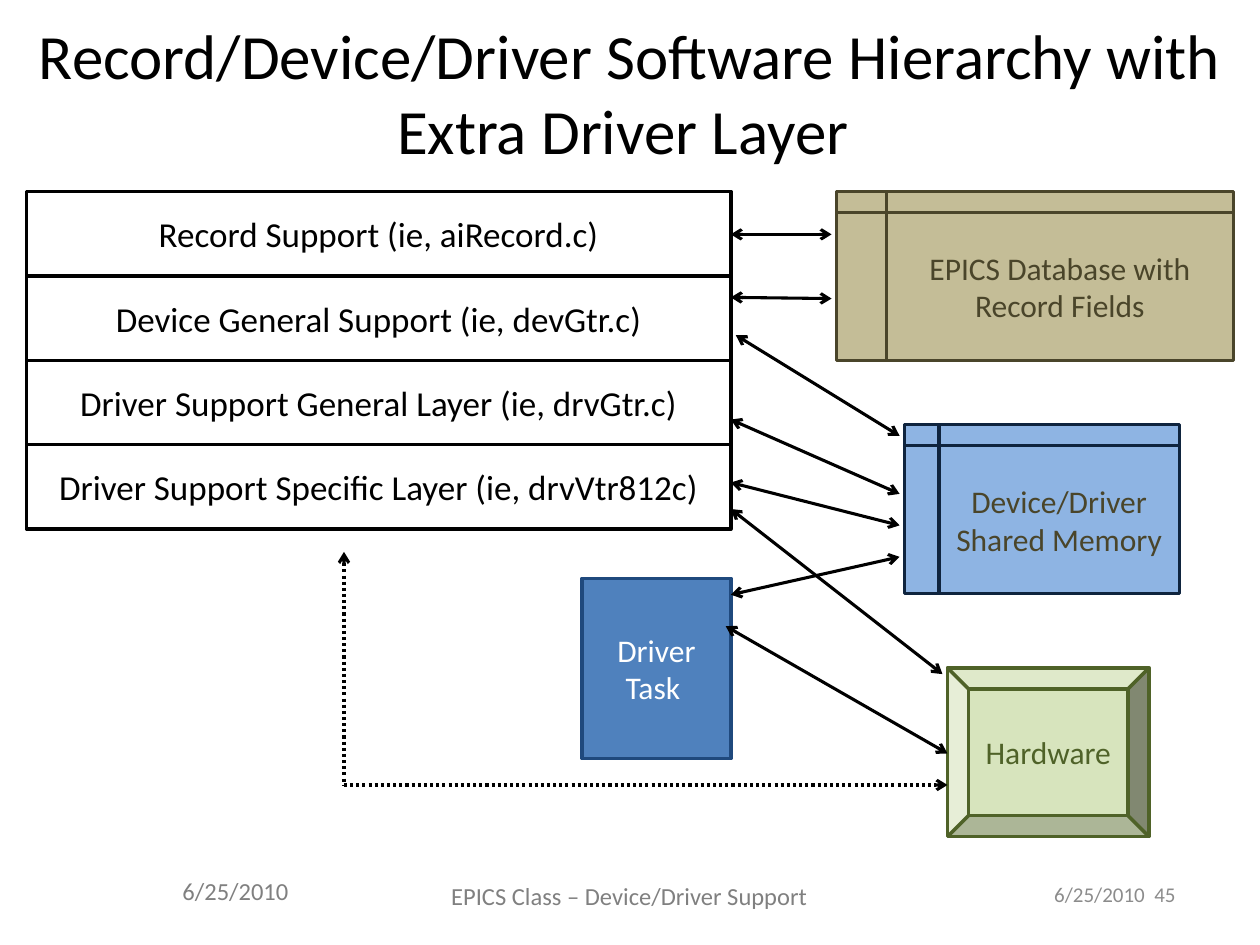
from typing import NamedTuple, Optional

from pptx import Presentation
from pptx.dml.color import RGBColor
from pptx.enum.dml import MSO_LINE
from pptx.enum.shapes import MSO_CONNECTOR, MSO_SHAPE
from pptx.enum.text import MSO_ANCHOR, MSO_AUTO_SIZE, PP_ALIGN
from pptx.oxml.ns import qn
from pptx.util import Inches, Pt
from lxml.etree import SubElement

FONT = "Calibri"
BLACK = RGBColor(0x00, 0x00, 0x00)
WHITE = RGBColor(0xFF, 0xFF, 0xFF)
FOOTER_GRAY = RGBColor(0x80, 0x80, 0x80)
NUMBER_GRAY = RGBColor(0x8C, 0x8C, 0x8C)
TAN = RGBColor(0xC4, 0xBD, 0x97)
DARK_TAN = RGBColor(0x4A, 0x45, 0x2A)
LIGHT_BLUE = RGBColor(0x8E, 0xB4, 0xE3)
NAVY = RGBColor(0x0F, 0x24, 0x3E)
BLUE = RGBColor(0x4F, 0x81, 0xBD)
DARK_BLUE = RGBColor(0x1F, 0x49, 0x7D)
LIGHT_GREEN = RGBColor(0xD7, 0xE4, 0xBD)
DARK_GREEN = RGBColor(0x4F, 0x62, 0x28)


class Box(NamedTuple):
    text: str
    kind: MSO_SHAPE
    left: float
    top: float
    width: float
    height: float
    fill: Optional[RGBColor]
    line: Optional[RGBColor]
    color: RGBColor
    size: int = 18
    align: PP_ALIGN = PP_ALIGN.CENTER
    anchor: MSO_ANCHOR = MSO_ANCHOR.MIDDLE


class Arrow(NamedTuple):
    start: tuple[float, float]
    end: tuple[float, float]
    head: bool = True
    tail: bool = True
    dotted: bool = False


class Footer(NamedTuple):
    text: str
    left: float
    width: float
    height: float
    size: int
    color: RGBColor
    align: PP_ALIGN


STACK_LEFT, STACK_TOP, STACK_WIDTH = 0.21, 1.52, 5.59
LAYER_HEIGHT = 0.67
STACK_RIGHT = STACK_LEFT + STACK_WIDTH
FOOTER_TOP = 6.9

LAYERS = [
    "Record Support (ie, aiRecord.c)",
    "Device General Support (ie, devGtr.c)",
    "Driver Support General Layer (ie, drvGtr.c)",
    "Driver Support Specific Layer (ie, drvVtr812c)",
]

BOXES = [
    Box("6/25/2010", MSO_SHAPE.RECTANGLE, 1.35, FOOTER_TOP, 1.6, 0.4, WHITE, None,
        FOOTER_GRAY, 14, PP_ALIGN.LEFT, MSO_ANCHOR.TOP),
    Box("EPICS Database with Record Fields", MSO_SHAPE.FLOWCHART_INTERNAL_STORAGE,
        6.64, 1.52, 3.15, 1.34, TAN, DARK_TAN, DARK_TAN),
    Box("Device/Driver Shared Memory", MSO_SHAPE.FLOWCHART_INTERNAL_STORAGE,
        7.18, 3.37, 2.18, 1.34, LIGHT_BLUE, NAVY, DARK_TAN),
    Box("Driver Task ", MSO_SHAPE.FLOWCHART_PROCESS,
        4.62, 4.59, 1.18, 1.43, BLUE, DARK_BLUE, WHITE),
    Box("Hardware", MSO_SHAPE.BEVEL,
        7.52, 5.3, 1.6, 1.34, LIGHT_GREEN, DARK_GREEN, DARK_GREEN),
]

ARROWS = [
    Arrow((STACK_RIGHT, 1.86), (6.6, 1.86)),
    Arrow((STACK_RIGHT, 2.36), (6.6, 2.37)),
    Arrow((5.84, 2.66), (7.14, 3.46)),
    Arrow((STACK_RIGHT, 3.33), (7.14, 3.92)),
    Arrow((STACK_RIGHT, 3.83), (7.14, 4.17)),
    Arrow((STACK_RIGHT, 4.72), (7.14, 4.42)),
    Arrow((STACK_RIGHT, 4.04), (7.48, 5.35)),
    Arrow((5.76, 4.97), (7.52, 5.98)),
    Arrow((2.73, 4.38), (2.73, 6.23), tail=False, dotted=True),
    Arrow((2.73, 6.23), (7.52, 6.23), head=False, dotted=True),
]

FOOTERS = [
    Footer("EPICS Class – Device/Driver Support", 2.98, 4.03, 0.42, 14,
           FOOTER_GRAY, PP_ALIGN.CENTER),
    Footer("6/25/2010  45", 7.1, 2.33, 0.4, 12, NUMBER_GRAY, PP_ALIGN.RIGHT),
]


def write_text(shape, text: str, *, size: int, color: RGBColor,
               align: PP_ALIGN = PP_ALIGN.CENTER,
               anchor: MSO_ANCHOR = MSO_ANCHOR.MIDDLE) -> None:
    frame = shape.text_frame
    frame.word_wrap = True
    frame.auto_size = MSO_AUTO_SIZE.NONE
    frame.vertical_anchor = anchor
    paragraph = frame.paragraphs[0]
    paragraph.alignment = align
    run = paragraph.add_run()
    run.text = text
    run.font.name = FONT
    run.font.size = Pt(size)
    run.font.color.rgb = color


def add_title(slide, text: str) -> None:
    title = slide.shapes.title
    title.left, title.top = Inches(0), Inches(0.22)
    title.width, title.height = Inches(10), Inches(1.02)
    write_text(title, text, size=36, color=BLACK)


def add_box(slide, box: Box) -> None:
    shape = slide.shapes.add_shape(box.kind, Inches(box.left), Inches(box.top),
                                   Inches(box.width), Inches(box.height))
    shape.shadow.inherit = False
    if box.fill is None:
        shape.fill.background()
    else:
        shape.fill.solid()
        shape.fill.fore_color.rgb = box.fill
    if box.line is None:
        shape.line.fill.background()
    else:
        shape.line.color.rgb = box.line
        shape.line.width = Pt(2)
    write_text(shape, box.text, size=box.size, color=box.color,
               align=box.align, anchor=box.anchor)


def add_arrow(slide, arrow: Arrow) -> None:
    points = [Inches(value) for value in (*arrow.start, *arrow.end)]
    connector = slide.shapes.add_connector(MSO_CONNECTOR.STRAIGHT, *points)
    line = connector.line
    line.color.rgb = BLACK
    line.width = Pt(1.75)
    if arrow.dotted:
        line.dash_style = MSO_LINE.ROUND_DOT
    outline = connector.get_or_add_ln()
    for tag, shown in (("a:headEnd", arrow.head), ("a:tailEnd", arrow.tail)):
        if shown:
            SubElement(outline, qn(tag), type="arrow")
    SubElement(connector.element.spPr, qn("a:effectLst"))


def add_footer(slide, footer: Footer) -> None:
    text_box = slide.shapes.add_textbox(Inches(footer.left), Inches(FOOTER_TOP),
                                        Inches(footer.width), Inches(footer.height))
    write_text(text_box, footer.text, size=footer.size, color=footer.color,
               align=footer.align)


def main() -> None:
    presentation = Presentation()
    presentation.slide_width = Inches(10)
    presentation.slide_height = Inches(7.5)
    slide = presentation.slides.add_slide(presentation.slide_layouts[5])

    add_title(slide, "Record/Device/Driver Software Hierarchy with Extra Driver Layer ")
    for footer in FOOTERS:
        add_footer(slide, footer)
    for index, text in enumerate(LAYERS):
        add_box(slide, Box(text, MSO_SHAPE.FLOWCHART_PROCESS, STACK_LEFT,
                           STACK_TOP + index * LAYER_HEIGHT, STACK_WIDTH, LAYER_HEIGHT,
                           None, BLACK, BLACK, 20))
    for box in BOXES:
        add_box(slide, box)
    for arrow in ARROWS:
        add_arrow(slide, arrow)
    presentation.save("out.pptx")


if __name__ == "__main__":
    main()
